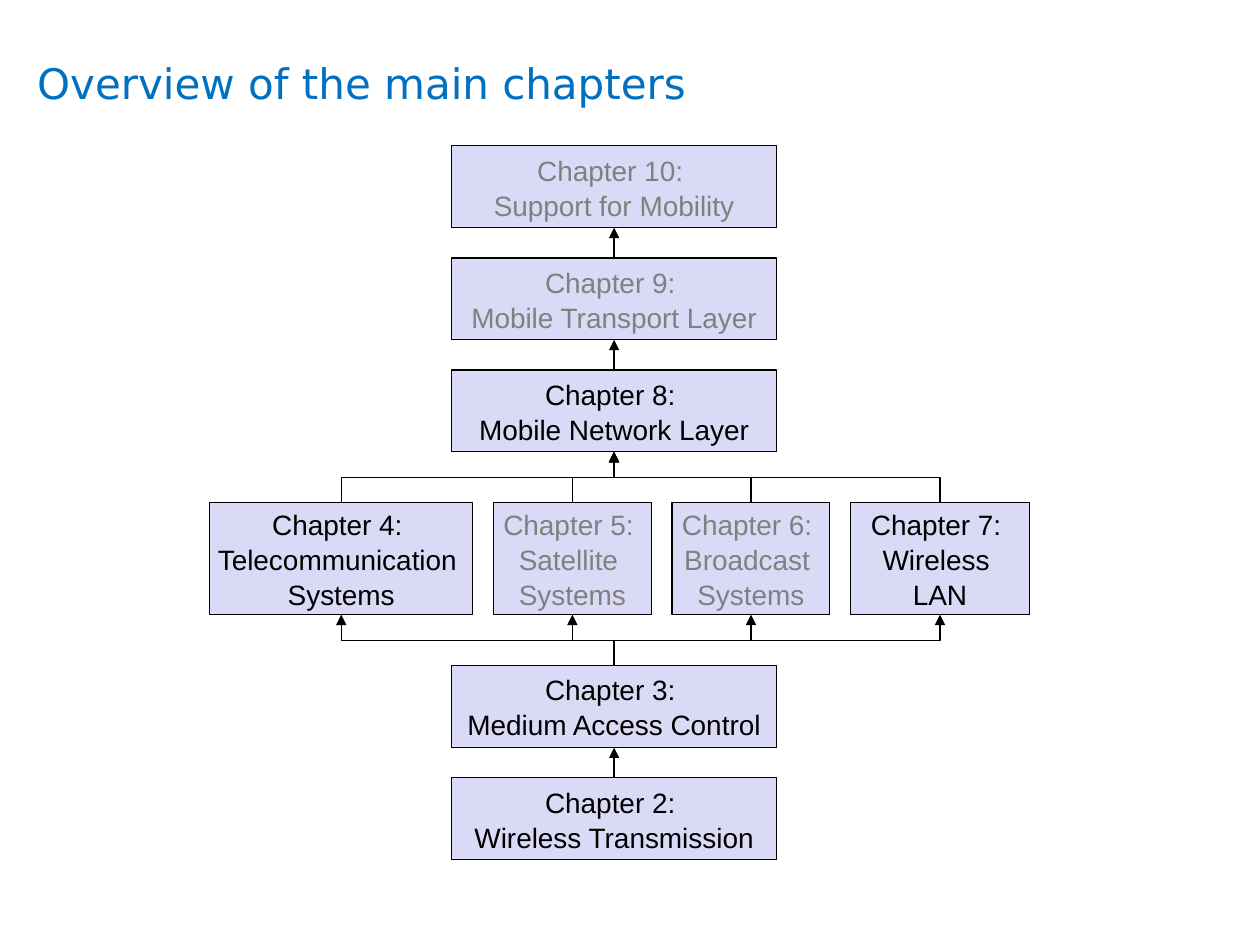
from lxml import etree
from pptx import Presentation
from pptx import util as u
from pptx.dml.color import RGBColor
from pptx.enum import shapes, text
from pptx.oxml import ns

BLACK, GREY, LAVENDER, BLUE = "000000", "808080", "DADAF6", "0070C0"
TOP, LEFT, BOTTOM, RIGHT = range(4)


def color(value):
    return RGBColor.from_string(value)


class ChapterMap:
    """Draws chapter boxes and the arrows between them on one slide."""

    font = "Arial"
    size = u.Pt(16)
    line_width = u.Pt(0.75)

    def __init__(self, slide):
        self.slide = slide

    def format_runs(self, paragraph, font, size, value):
        for run in paragraph.runs:
            run.font.name = font
            run.font.size = size
            run.font.color.rgb = color(value)

    def title(self, words, left, top, width, height):
        shape = self.slide.shapes.add_textbox(u.Cm(left), u.Cm(top), u.Cm(width), u.Cm(height))
        frame = shape.text_frame
        frame.word_wrap = True
        frame.vertical_anchor = text.MSO_ANCHOR.BOTTOM
        frame.text = words
        self.format_runs(frame.paragraphs[0], "DejaVu Sans", u.Pt(24), BLUE)

    def box(self, words, left, top, width, height, ink=BLACK):
        shape = self.slide.shapes.add_shape(
            shapes.MSO_SHAPE.RECTANGLE, u.Cm(left), u.Cm(top), u.Cm(width), u.Cm(height))
        shape.shadow.inherit = False
        shape.fill.solid()
        shape.fill.fore_color.rgb = color(LAVENDER)
        shape.line.color.rgb = color(BLACK)
        shape.line.width = self.line_width
        frame = shape.text_frame
        frame.word_wrap = False
        frame.vertical_anchor = text.MSO_ANCHOR.MIDDLE
        frame.text = words
        for paragraph in frame.paragraphs:
            paragraph.alignment = text.PP_ALIGN.CENTER
            paragraph.line_spacing = 1.04
            self.format_runs(paragraph, self.font, self.size, ink)
        return shape

    def arrow(self, lower, upper, kind=shapes.MSO_CONNECTOR.STRAIGHT):
        connector = self.slide.shapes.add_connector(kind, 0, 0, 0, 0)
        connector.begin_connect(lower, TOP)
        connector.end_connect(upper, BOTTOM)
        connector.line.color.rgb = color(BLACK)
        connector.line.width = self.line_width
        line = connector.line._get_or_add_ln()
        etree.SubElement(line, ns.qn("a:tailEnd"), type="triangle")
        etree.SubElement(connector._element.spPr, ns.qn("a:effectLst"))
        return connector

    def elbow(self, lower, upper):
        connector = self.arrow(lower, upper, shapes.MSO_CONNECTOR.ELBOW)
        start, end = lower.left + lower.width // 2, upper.left + upper.width // 2
        rise, run = lower.top - upper.top - upper.height, abs(end - start)
        connector.left = (start + end - rise) // 2
        connector.top = upper.top + upper.height + (rise - run) // 2
        connector.width, connector.height = rise, run
        leftward = end < start
        frame = connector._element.spPr.find(ns.qn("a:xfrm"))
        frame.set("rot", str((90 if leftward else 270) * 60000))
        frame.set("flipH", "1" if leftward else "0")
        frame.set("flipV", "0")


def main():
    presentation = Presentation()
    presentation.slide_width, presentation.slide_height = u.Cm(25.4), u.Cm(19.05)
    chapters = ChapterMap(presentation.slides.add_slide(presentation.slide_layouts[6]))
    chapters.title("Overview of the main chapters", 0.5, 0, 16.8, 2.3)

    step = 2.26
    stack = [
        ("Chapter 2: \nWireless Transmission", 13.42 + step, BLACK),
        ("Chapter 3: \nMedium Access Control", 13.42, BLACK),
        ("Chapter 8: \nMobile Network Layer", 2.94 + 2 * step, BLACK),
        ("Chapter 9: \nMobile Transport Layer", 2.94 + step, GREY),
        ("Chapter 10: \nSupport for Mobility", 2.94, GREY),
    ]
    transmission, access, network, transport, mobility = [
        chapters.box(words, 9.1, top, 6.56, 1.65, ink) for words, top, ink in stack]

    technologies = [
        ("Chapter 4: \nTelecommunication \vSystems", 5.3, BLACK),
        ("Chapter 5: \nSatellite \nSystems", 3.18, GREY),
        ("Chapter 6: \nBroadcast \nSystems", 3.18, GREY),
        ("Chapter 7: \nWireless \nLAN", 3.6, BLACK),
    ]
    left, gap = 4.23, 0.42
    for words, width, ink in technologies:
        technology = chapters.box(words, left, 10.13, width, 2.26, ink)
        chapters.elbow(access, technology)
        chapters.elbow(technology, network)
        left += width + gap

    for lower, upper in ((transmission, access), (network, transport), (transport, mobility)):
        chapters.arrow(lower, upper)
    presentation.save("out.pptx")


if __name__ == "__main__":
    main()
